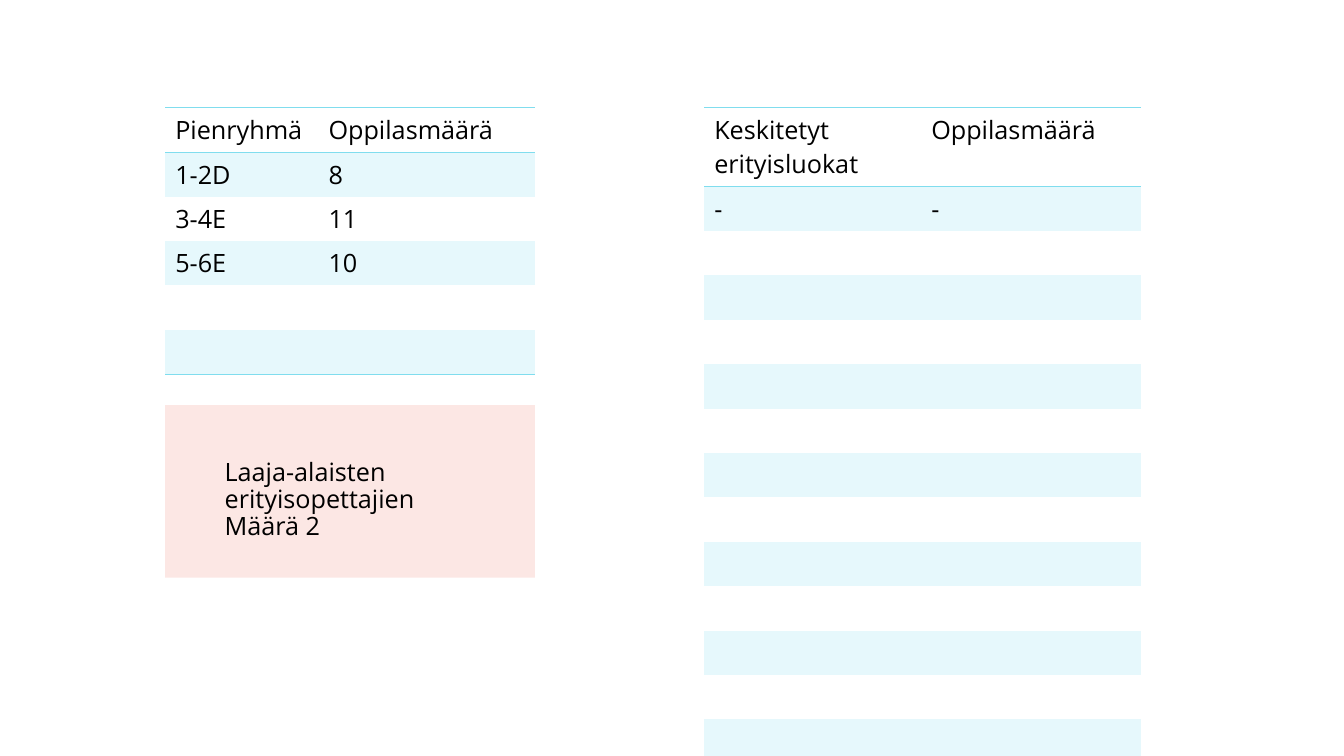
import pptx
import pptx.util
import pptx.dml.color
import pptx.enum.shapes
import pptx.enum.text
import pptx.oxml

Pt = pptx.util.Pt
RGBColor = pptx.dml.color.RGBColor

COLORS = {"line": "80DDEE", "band": "E6F8FC", "note": "FCE7E4", "text": "000000"}
FONT = "Open Sans"
PLAIN_TABLE = "{2D5ABB26-0587-4C30-8999-92F81FD0307C}"
TABLE_TOP = 77
ROW_HEIGHT = 31.7


def add_text(paragraph, text):
    paragraph.font.name = FONT
    paragraph.font.size = Pt(18)
    paragraph.font.color.rgb = RGBColor.from_string(COLORS["text"])
    if text:
        paragraph.add_run().text = text


def add_border(cell, side):
    border = pptx.oxml.parse_xml(
        f'<a:{side} xmlns:a="http://schemas.openxmlformats.org/drawingml/2006/main" w="12700">'
        f'<a:solidFill><a:srgbClr val="{COLORS["line"]}"/></a:solidFill></a:{side}>')
    cell._tc.get_or_add_tcPr().insert(0, border)


presentation = pptx.Presentation()
presentation.slide_width = Pt(960)
presentation.slide_height = Pt(540)
slide = presentation.slides.add_slide(presentation.slide_layouts[6])

# Tables: left, column widths, header height, row count, filled rows
tables = [
    (118, (109.5, 154.5), ROW_HEIGHT, 6,
     [("Pienryhmä", "Oppilasmäärä"), ("1-2D", "8"), ("3-4E", "11"), ("5-6E", "10")]),
    (503, (155, 157), 56.2, 14,
     [("Keskitetyt erityisluokat", "Oppilasmäärä"), ("-", "-")]),
]
for left, widths, header_height, row_count, filled_rows in tables:
    height = header_height + (row_count - 1) * ROW_HEIGHT
    table = slide.shapes.add_table(
        row_count, len(widths), Pt(left), Pt(TABLE_TOP), Pt(sum(widths)), Pt(height)).table
    table._tbl.tblPr.find(pptx.oxml.ns.qn("a:tableStyleId")).text = PLAIN_TABLE
    for column, width in zip(table.columns, widths):
        column.width = Pt(width)
    for row_index, row in enumerate(table.rows):
        row.height = Pt(ROW_HEIGHT if row_index else header_height)
        texts = filled_rows[row_index] if row_index < len(filled_rows) else ("", "")
        for cell, text in zip(row.cells, texts):
            add_text(cell.text_frame.paragraphs[0], text)
            if row_index % 2:
                cell.fill.solid()
                cell.fill.fore_color.rgb = RGBColor.from_string(COLORS["band"])
            else:
                cell.fill.background()
            if row_index in (0, row_count - 1):
                add_border(cell, "lnB")
            if row_index == 0:
                add_border(cell, "lnT")

# Note on special education teachers: panel and text block
note = slide.shapes.add_group_shape()
for left, top, width, height, lines in [
    (118, 289.4, 264, 123.2, []),
    (153.4, 325.4, 188, 72.7, ["Laaja-alaisten", "erityisopettajien", "Määrä 2"]),
]:
    shape = note.shapes.add_shape(
        pptx.enum.shapes.MSO_SHAPE.RECTANGLE, Pt(left), Pt(top), Pt(width), Pt(height))
    shape.shadow.inherit = False
    shape.fill.solid()
    shape.fill.fore_color.rgb = RGBColor.from_string(COLORS["note"])
    shape.line.fill.background()
    frame = shape.text_frame
    frame.word_wrap = True
    frame.vertical_anchor = pptx.enum.text.MSO_ANCHOR.TOP
    for index, line in enumerate(lines):
        paragraph = frame.add_paragraph() if index else frame.paragraphs[0]
        paragraph.alignment = pptx.enum.text.PP_ALIGN.LEFT
        paragraph.line_spacing = 0.88
        add_text(paragraph, line)

presentation.save("out.pptx")
